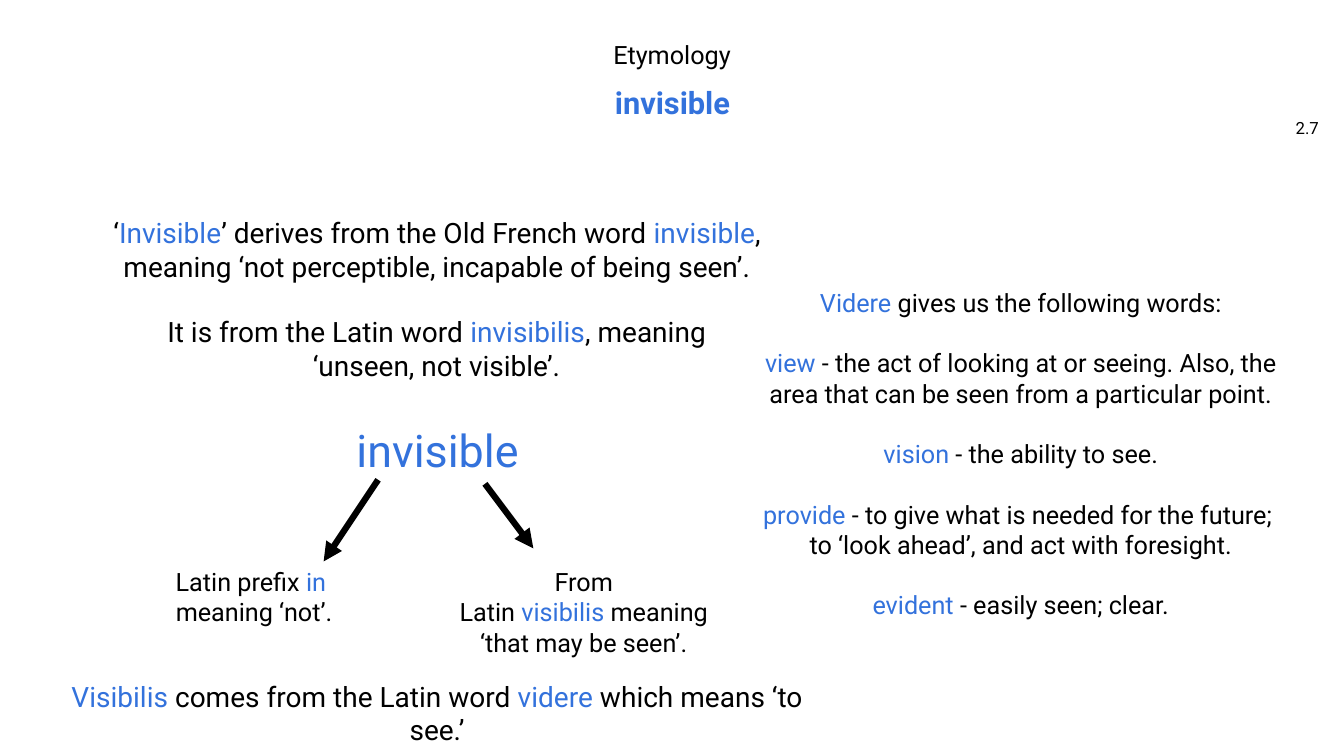
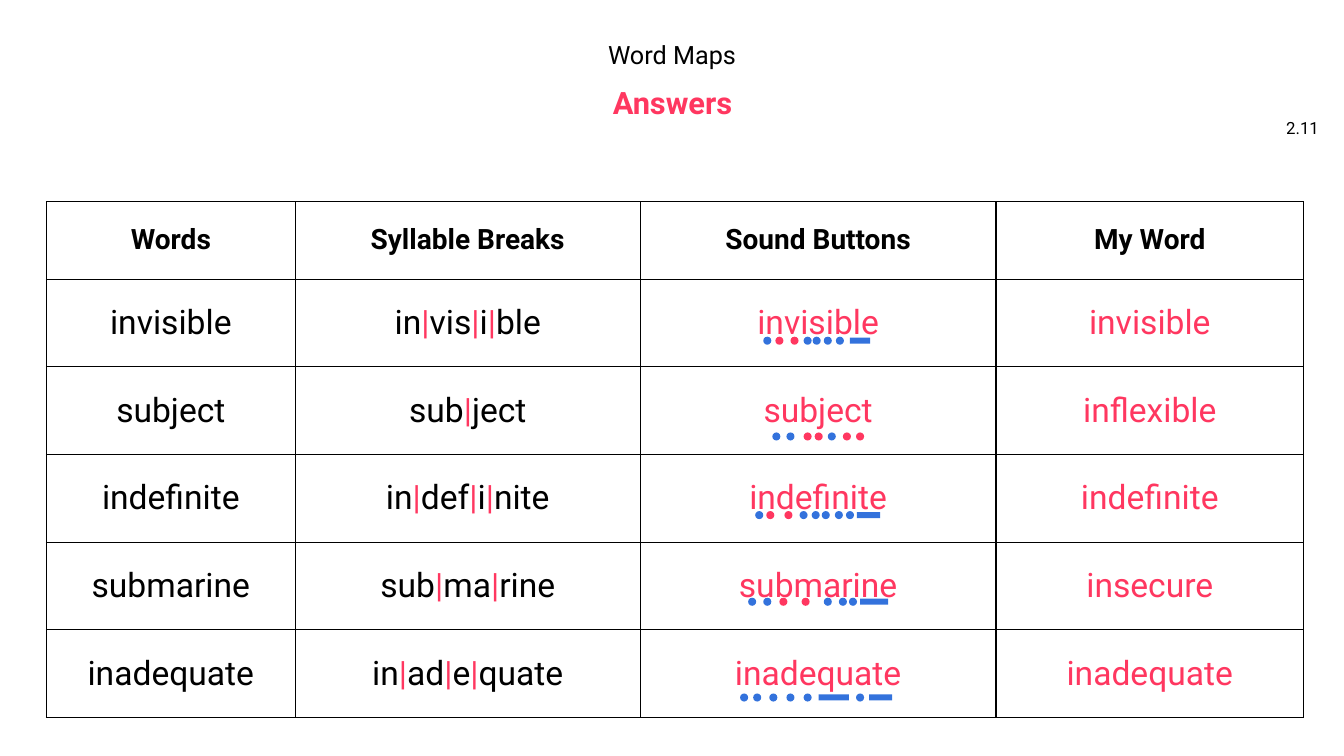
"""Build two word-study slides: an etymology page and a word map answer table."""
from lxml import etree
from pptx import Presentation
from pptx.dml.color import RGBColor
from pptx.enum.shapes import MSO_CONNECTOR, MSO_SHAPE
from pptx.enum.text import MSO_ANCHOR, PP_ALIGN
from pptx.oxml.ns import qn
from pptx.util import Inches, Pt

BLACK = RGBColor(0x00, 0x00, 0x00)
WHITE = RGBColor(0xFF, 0xFF, 0xFF)
BLUE = RGBColor(0x33, 0x72, 0xDC)
PINK = RGBColor(0xFF, 0x37, 0x60)
FONT = "Roboto"
CENTER, RIGHT = PP_ALIGN.CENTER, PP_ALIGN.RIGHT
TOP, MIDDLE = MSO_ANCHOR.TOP, MSO_ANCHOR.MIDDLE
STRAIGHT = MSO_CONNECTOR.STRAIGHT
OVAL, RECTANGLE = MSO_SHAPE.OVAL, MSO_SHAPE.RECTANGLE


def write(frame, paragraphs, size, bold=False, align=CENTER, line_spacing=None):
    """Fill a text frame with paragraphs, each a list of (text, colour) runs."""
    for index, runs in enumerate(paragraphs):
        paragraph = frame.add_paragraph() if index else frame.paragraphs[0]
        paragraph.alignment = align
        if line_spacing:
            paragraph.line_spacing = line_spacing
        for text, color in runs:
            run = paragraph.add_run()
            run.text = text
            run.font.name = FONT
            run.font.size = Pt(size)
            run.font.bold = bold
            run.font.color.rgb = color


def add_text(slide, box, paragraphs, size, anchor=TOP, **style):
    """Add a wrapping text box and return its text frame."""
    frame = slide.shapes.add_textbox(*[Inches(length) for length in box]).text_frame
    frame.word_wrap = True
    frame.vertical_anchor = anchor
    write(frame, paragraphs, size, **style)
    return frame


presentation = Presentation()
presentation.slide_width = Inches(13.33)
presentation.slide_height = Inches(7.5)

slides = []
for topic, heading, heading_color, number in [
    ("Etymology", "invisible", BLUE, "2.7"),
    ("Word Maps", "Answers", PINK, "2.11"),
]:
    slide = presentation.slides.add_slide(presentation.slide_layouts[6])
    add_text(slide, (3.82, 0.37, 5.69, 0.35), [[(topic, BLACK)]], 18, line_spacing=0.9)
    add_text(slide, (2.09, 0.84, 9.16, 0.4), [[(heading, heading_color)]], 22,
             MIDDLE, bold=True, line_spacing=0.9)
    add_text(slide, (12.55, 1.07, 0.63, 0.4), [[(number, BLACK)]], 12, MIDDLE, align=RIGHT)
    slides.append(slide)
etymology_slide, answers_slide = slides

for box, size, paragraphs in [
    ((0.77, 2.09, 7.13, 0.77), 20, [
        [("‘", BLACK), ("Invisible", BLUE), ("’ derives from the Old French word ", BLACK),
         ("invisible", BLUE),
         (", meaning ‘not perceptible, incapable of being seen’.", BLACK)]]),
    ((1.54, 3.07, 5.58, 0.77), 20, [
        [("It is from the Latin word ", BLACK), ("invisibilis", BLUE),
         (", meaning ‘unseen, not visible’.", BLACK)]]),
    ((0.87, 5.57, 3.3, 0.71), 18, [
        [("Latin prefix ", BLACK), ("in ", BLUE)],
        [("meaning ‘not’.", BLACK)]]),
    ((4.14, 5.57, 3.3, 1.01), 18, [
        [("From", BLACK)],
        [("Latin ", BLACK), ("visibilis", BLUE), (" meaning", BLACK)],
        [("‘that may be seen’.", BLACK)]]),
    ((0.55, 6.69, 7.57, 0.77), 20, [
        [("Visibilis", BLUE), (" comes from the Latin word ", BLACK), ("videre", BLUE),
         (" which means ‘to see.’", BLACK)]]),
]:
    add_text(etymology_slide, box, paragraphs, size)

add_text(etymology_slide, (2.52, 4.08, 3.64, 0.83), [[("invisible", BLUE)]], 32,
         MIDDLE, line_spacing=0.9)

derived_words = add_text(etymology_slide, (7.46, 2.8, 5.33, 3.43), [
    [("Videre", BLUE), (" gives us the following words:", BLACK)],
    [("view", BLUE), (" - the act of looking at or seeing. Also, the area that can be "
                      "seen from a particular point.", BLACK)],
    [("vision", BLUE), (" - the ability to see.", BLACK)],
    [("provide ", BLUE), ("- to give what is needed for the future; ", BLACK)],
    [("to ‘look ahead’, and act with foresight.", BLACK)],
    [("evident", BLUE), (" - easily seen; clear.", BLACK)],
], 18)
for index in (1, 2, 3, 5):
    derived_words.paragraphs[index].space_before = Pt(21.6)

for ends in [(3.75, 4.76, 3.21, 5.57), (4.81, 4.8, 5.29, 5.44)]:
    arrow = etymology_slide.shapes.add_connector(STRAIGHT, *[Inches(end) for end in ends])
    arrow.line.color.rgb = BLACK
    arrow.line.width = Pt(4.5)
    etree.SubElement(arrow.line._get_or_add_ln(), qn("a:tailEnd"), type="triangle")
    etree.SubElement(arrow._element.spPr, qn("a:effectLst"))

column_widths = [2.47, 3.42, 3.53, 3.05]
row_heights = [0.77] + [0.87] * 5
headers = ["Words", "Syllable Breaks", "Sound Buttons", "My Word"]
answers = [
    ("in|vis|i|ble", "invisible"),
    ("sub|ject", "inflexible"),
    ("in|def|i|nite", "indefinite"),
    ("sub|ma|rine", "insecure"),
    ("in|ad|e|quate", "inadequate"),
]
rows = [[[(header, BLACK)] for header in headers]]
for syllables, my_word in answers:
    word = syllables.replace("|", "")
    breaks = []
    for syllable in syllables.split("|"):
        breaks += [("|", PINK), (syllable, BLACK)]
    rows.append([[(word, BLACK)], breaks[1:], [(word, PINK)], [(my_word, PINK)]])

table = answers_slide.shapes.add_table(
    len(rows), len(headers), Inches(0.46), Inches(2),
    Inches(sum(column_widths)), Inches(sum(row_heights))).table
table.first_row = False
table.horz_banding = False
for column, width in zip(table.columns, column_widths):
    column.width = Inches(width)
for row_index, (row, height) in enumerate(zip(rows, row_heights)):
    table.rows[row_index].height = Inches(height)
    is_header = row_index == 0
    for column_index, runs in enumerate(row):
        cell = table.cell(row_index, column_index)
        cell.vertical_anchor = MIDDLE
        write(cell.text_frame, [runs], 20 if is_header else 24, bold=is_header)
        properties = cell._tc.get_or_add_tcPr()
        for side in ("a:lnL", "a:lnR", "a:lnT", "a:lnB"):
            border = etree.SubElement(properties, qn(side), w=str(Pt(1)))
            border_fill = etree.SubElement(border, qn("a:solidFill"))
            etree.SubElement(border_fill, qn("a:srgbClr"), val=str(BLACK))
        cell.fill.solid()
        cell.fill.fore_color.rgb = WHITE

DOT = 0.08
BAR_HEIGHT = 0.06
sound_buttons = [
    (3.34, [7.57, 7.97, 8.06, 8.17, 8.29], [7.69, 7.84], [(8.43, 0.2)]),
    (4.29, [7.66, 7.8, 8.21], [7.97, 8.08, 8.36, 8.49], []),
    (5.07, [7.49, 7.93, 8.05, 8.15, 8.28, 8.39], [7.6, 7.78], [(8.5, 0.23)]),
    (5.93, [7.42, 7.57, 8.17, 8.32, 8.42], [7.73, 7.95], [(8.53, 0.28)]),
    (6.88, [7.34, 7.47, 7.63, 7.8, 7.97, 8.49], [], [(8.12, 0.3), (8.62, 0.23)]),
]
for top, blue_dots, pink_dots, bars in sound_buttons:
    buttons = [(OVAL, left, top, DOT, DOT, BLUE) for left in blue_dots]
    buttons += [(OVAL, left, top, DOT, DOT, PINK) for left in pink_dots]
    buttons += [(RECTANGLE, left, top + 0.01, width, BAR_HEIGHT, BLUE) for left, width in bars]
    group = answers_slide.shapes.add_group_shape()
    for kind, *box, color in buttons:
        shape = group.shapes.add_shape(kind, *[Inches(length) for length in box])
        shape.shadow.inherit = False
        shape.fill.solid()
        shape.fill.fore_color.rgb = color
        shape.line.fill.background()

presentation.save("out.pptx")
